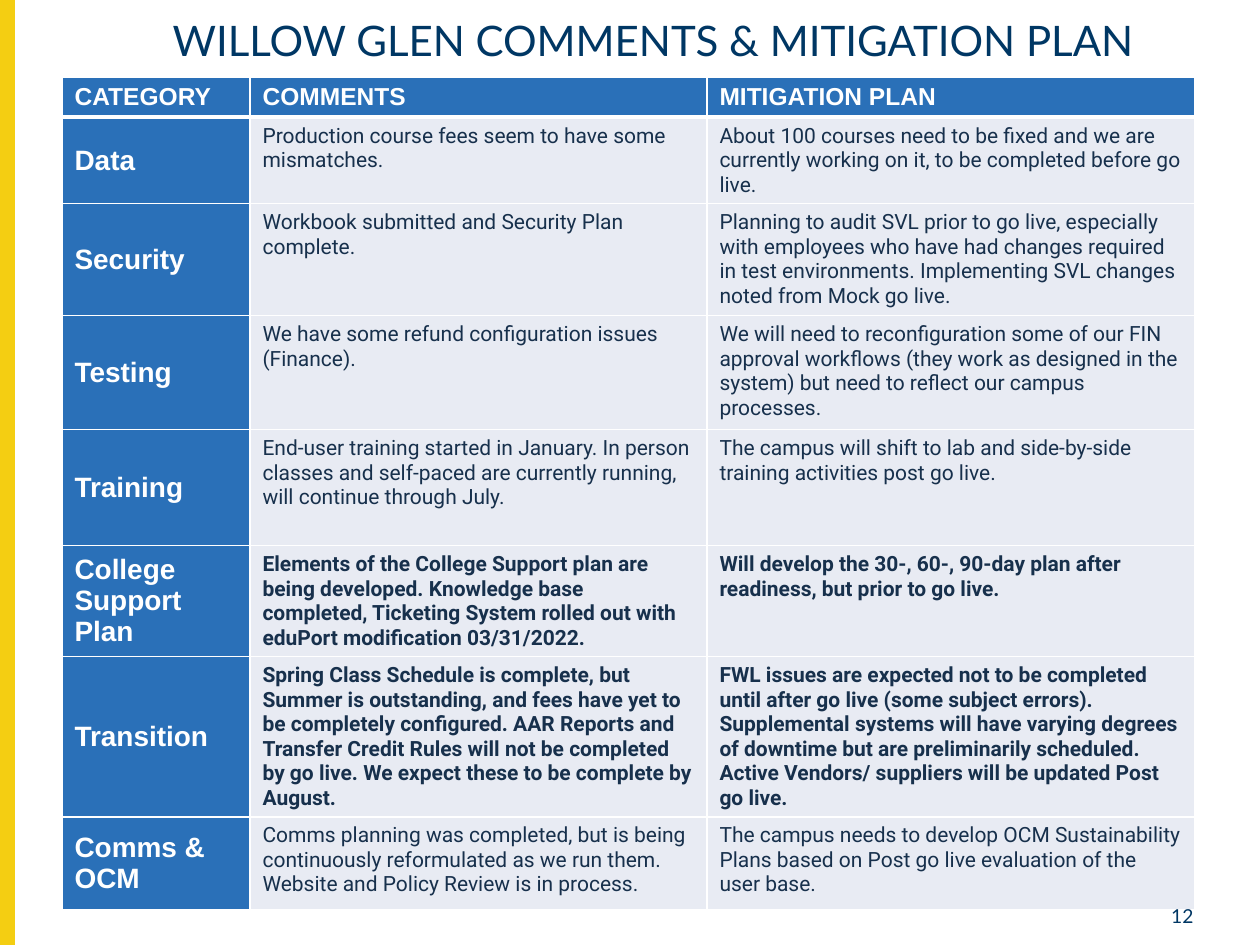
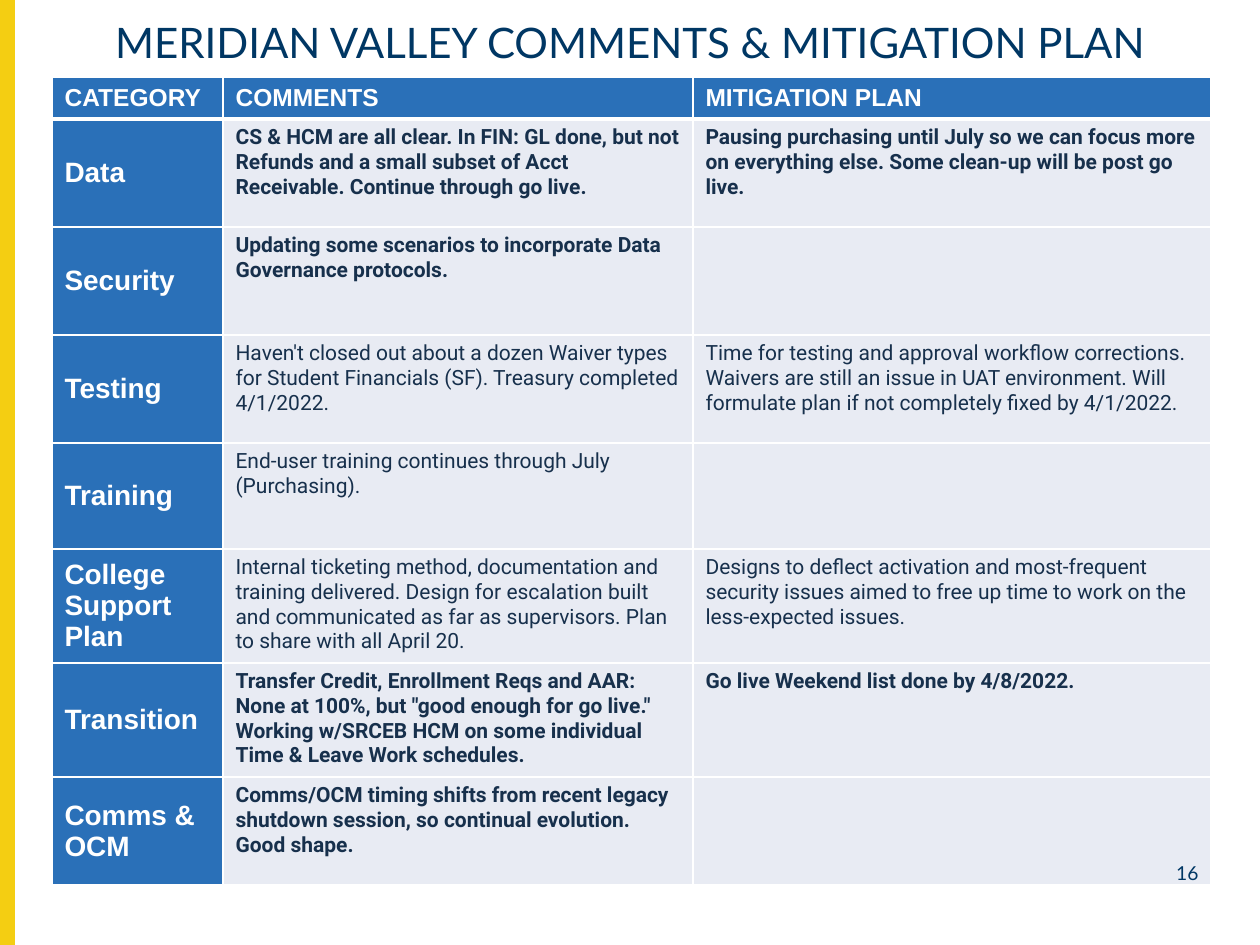
import pptx
import pptx.dml.color
import pptx.enum.shapes
import pptx.enum.text
import pptx.oxml.ns
import pptx.util
from lxml import etree

# Content
HEADINGS = ("CATEGORY", "COMMENTS", "MITIGATION PLAN")
CATEGORIES = ("Data", "Security", "Testing", "Training",
              "College Support Plan", "Transition", "Comms & OCM")

# Each row: bold, comments, mitigation plan. Boxes are left, top, width, height in px.
COLLEGES = [
    {
        "title": "WILLOW GLEN COMMENTS & MITIGATION PLAN",
        "title_box": (62, 13, 1182, 60),
        "number": "12",
        "number_box": (1142, 898, 64, 33),
        "table_corner": (62, 77),
        "column_widths": (188, 457, 488),
        "row_heights": (40, 86, 112, 114, 116, 111, 160, 93),
        "rows": [
            (False, "Production course fees seem to have some mismatches.",
             "About 100 courses need to be fixed and we are currently working on it, "
             "to be completed before go live."),
            (False, "Workbook submitted and Security Plan complete.",
             "Planning to audit SVL prior to go live, especially with employees who have had "
             "changes required in test environments. Implementing SVL changes noted from "
             "Mock go live."),
            (False, "We have some refund configuration issues (Finance).",
             "We will need to reconfiguration some of our FIN approval workflows (they work as "
             "designed in the system) but need to reflect our campus processes."),
            (False, "End-user training started in January. In person classes and self-paced are "
             "currently running, will continue through July.",
             "The campus will shift to lab and side-by-side training activities post go live."),
            (True, "Elements of the College Support plan are being developed. Knowledge base "
             "completed, Ticketing System rolled out with eduPort modification 03/31/2022.",
             "Will develop the 30-, 60-, 90-day plan after readiness, but prior to go live."),
            (True, "Spring Class Schedule is complete, but Summer is outstanding, and fees have "
             "yet to be completely configured. AAR Reports and Transfer Credit Rules will not be "
             "completed by go live. We expect these to be complete by August.",
             "FWL issues are expected not to be completed until after go live (some subject "
             "errors). Supplemental systems will have varying degrees of downtime but are "
             "preliminarily scheduled. Active Vendors/ suppliers will be updated Post go live."),
            (False, "Comms planning was completed, but is being continuously reformulated as we "
             "run them. Website and Policy Review is in process.",
             "The campus needs to develop OCM Sustainability Plans based on Post go live "
             "evaluation of the user base."),
        ],
    },
    {
        "title": "MERIDIAN VALLEY COMMENTS & MITIGATION PLAN",
        "title_box": (39, 15, 1182, 60),
        "number": "16",
        "number_box": (1158, 855, 53, 32),
        "table_corner": (52, 77),
        "column_widths": (171, 470, 518),
        "row_heights": (42, 108, 108, 108, 106, 114, 114, 108),
        "rows": [
            (True, "CS & HCM are all clear. In FIN: GL done, but not Refunds and a small subset of "
             "Acct Receivable. Continue through go live.",
             "Pausing purchasing until July so we can focus more on everything else. Some "
             "clean-up will be post go live."),
            (True, "Updating some scenarios to incorporate Data Governance protocols.", ""),
            (False, "Haven't closed out about a dozen Waiver types for Student Financials (SF). "
             "Treasury completed 4/1/2022.",
             "Time for testing and approval workflow corrections. Waivers are still an issue in "
             "UAT environment. Will formulate plan if not completely fixed by 4/1/2022."),
            (False, "End-user training continues through July (Purchasing).", ""),
            (False, "Internal ticketing method, documentation and training delivered. Design for "
             "escalation built and communicated as far as supervisors. Plan to share with all "
             "April 20.",
             "Designs to deflect activation and most-frequent security issues aimed to free up "
             "time to work on the less-expected issues."),
            (True, "Transfer Credit, Enrollment Reqs and AAR: None at 100%, but \"good enough for "
             "go live.\" Working w/SRCEB HCM on some individual Time & Leave Work schedules.",
             "Go live Weekend list done by 4/8/2022."),
            (True, "Comms/OCM timing shifts from recent legacy shutdown session, so continual "
             "evolution. Good shape.", ""),
        ],
    },
]

# Shared style
COLORS = {"band": "F4CE12", "navy": "003764", "blue": "2A70B8",
          "pale": "E8EBF3", "ink": "17304C", "white": "FFFFFF"}
SLIDE_SIZE = (1260, 945)
BAND_BOX = (0, 0, 14, 945)
EMU_PER_PX = 914400 / 126
ALIGN = pptx.enum.text.PP_ALIGN
ANCHOR = pptx.enum.text.MSO_ANCHOR


def px(length):
    return pptx.util.Emu(round(length * EMU_PER_PX))


def color(name):
    return pptx.dml.color.RGBColor.from_string(COLORS[name])


def format_text(text_frame, font_name, size, color_name, bold=False):
    for paragraph in text_frame.paragraphs:
        for run in paragraph.runs:
            run.font.name = font_name
            run.font.size = pptx.util.Pt(size)
            run.font.bold = bold
            run.font.color.rgb = color(color_name)


def add_band(slide):
    band = slide.shapes.add_shape(pptx.enum.shapes.MSO_SHAPE.RECTANGLE, *map(px, BAND_BOX))
    band.shadow.inherit = False
    band.fill.solid()
    band.fill.fore_color.rgb = color("band")
    band.line.color.rgb = color("band")
    band.line.width = pptx.util.Pt(1)


def add_text(slide, box, text, size, alignment, anchor=ANCHOR.TOP, line_spacing=None):
    text_frame = slide.shapes.add_textbox(*map(px, box)).text_frame
    text_frame.word_wrap = True
    text_frame.vertical_anchor = anchor
    text_frame.text = text
    paragraph = text_frame.paragraphs[0]
    paragraph.alignment = alignment
    paragraph.line_spacing = line_spacing
    format_text(text_frame, "Lato", size, "navy")


def set_borders(cell, top, bottom):
    properties = cell._tc.get_or_add_tcPr()
    widths = {"a:lnL": 1, "a:lnR": 1, "a:lnT": top, "a:lnB": bottom}
    for index, (tag, width) in enumerate(widths.items()):
        line = etree.Element(pptx.oxml.ns.qn(tag), w=str(pptx.util.Pt(width)))
        fill = etree.SubElement(line, pptx.oxml.ns.qn("a:solidFill"))
        etree.SubElement(fill, pptx.oxml.ns.qn("a:srgbClr"), val=COLORS["white"])
        properties.insert(index, line)


def fill_cell(cell, text, row_index, column_index, bold):
    is_label = row_index == 0 or column_index == 0
    cell.fill.solid()
    cell.fill.fore_color.rgb = color("blue" if is_label else "pale")
    cell.text_frame.text = text
    if is_label:
        cell.vertical_anchor = ANCHOR.MIDDLE
        format_text(cell.text_frame, "Arial", 16 if row_index else 14, "white", True)
    else:
        format_text(cell.text_frame, "Roboto", 12, "ink", bold)
    set_borders(cell, top=3 if row_index == 1 else 1, bottom=1 if row_index else 3)


def add_plan_table(slide, college):
    widths, heights = college["column_widths"], college["row_heights"]
    box = (*college["table_corner"], sum(widths), sum(heights))
    table = slide.shapes.add_table(len(heights), len(widths), *map(px, box)).table
    for column, width in zip(table.columns, widths):
        column.width = px(width)
    for row, height in zip(table.rows, heights):
        row.height = px(height)

    rows = [(True, HEADINGS)]
    for category, (bold, comments, plan) in zip(CATEGORIES, college["rows"]):
        rows.append((bold, (category, comments, plan)))
    for row_index, (bold, texts) in enumerate(rows):
        for column_index, text in enumerate(texts):
            fill_cell(table.cell(row_index, column_index), text, row_index, column_index, bold)


def main():
    presentation = pptx.Presentation()
    presentation.slide_width, presentation.slide_height = map(px, SLIDE_SIZE)
    for college in COLLEGES:
        slide = presentation.slides.add_slide(presentation.slide_layouts[6])
        add_band(slide)
        add_plan_table(slide, college)
        add_text(slide, college["number_box"], college["number"], 11, ALIGN.RIGHT)
        add_text(slide, college["title_box"], college["title"], 24, ALIGN.CENTER,
                 ANCHOR.MIDDLE, 0.9)
    presentation.save("out.pptx")


if __name__ == "__main__":
    main()
